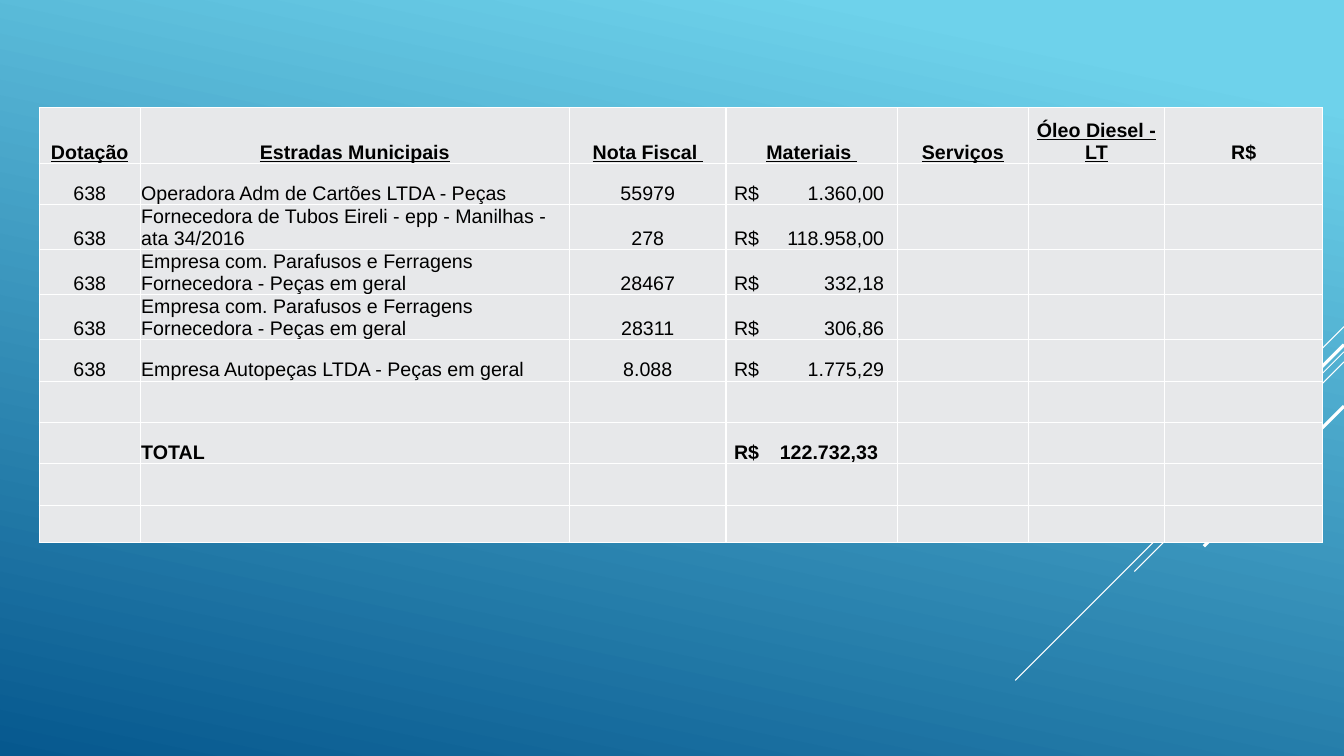
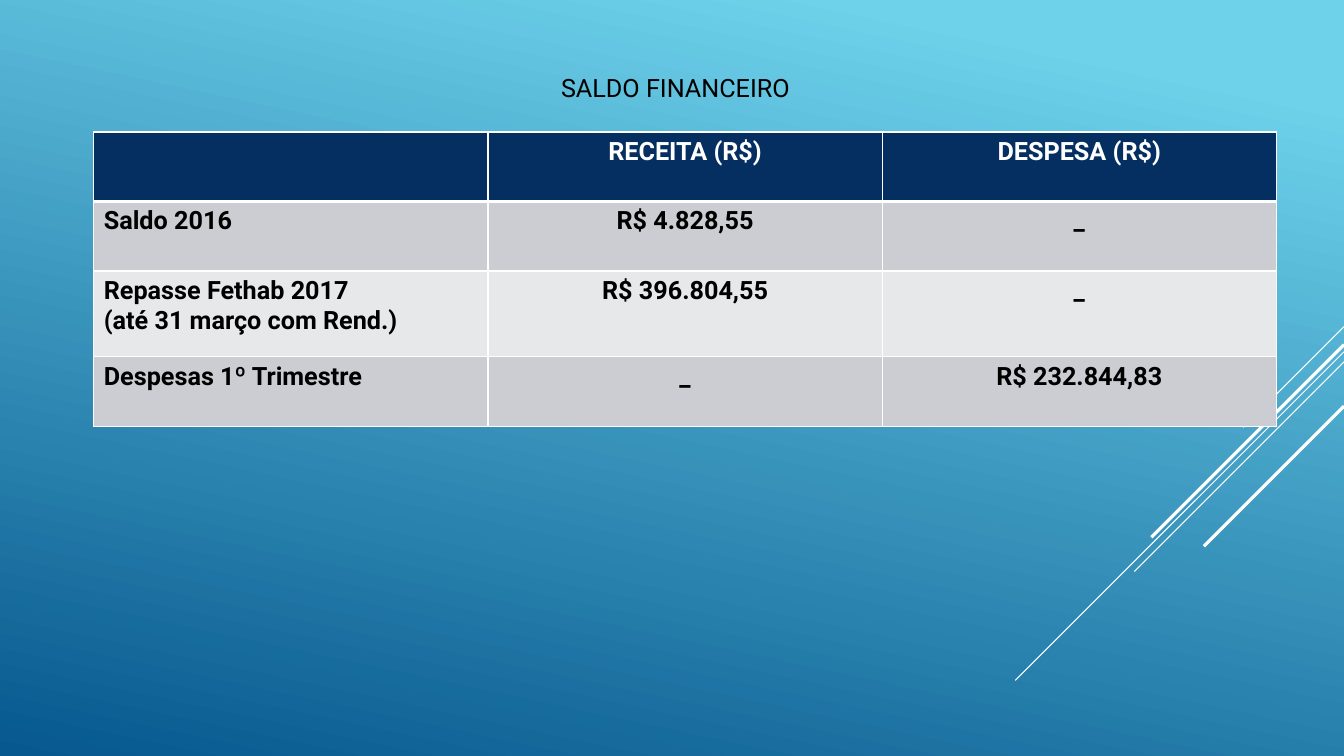
from lxml import etree
from pptx import Presentation, util as u
from pptx.dml.color import RGBColor
from pptx.enum import shapes, text
from pptx.oxml.ns import qn

HUES = {"sky": "6ED2EB", "deep": "06588E", "navy": "052F61", "white": "FFFFFF",
        "black": "000000", "pale": "E7E8EA", "grey": "CCCDD2"}
LEFT, MID, BOTTOM = text.PP_ALIGN.LEFT, text.PP_ALIGN.CENTER, text.MSO_ANCHOR.BOTTOM
# Top of each ray on the right edge, its reach down and left, its width in points
RAYS = [(3.24, 1, 0.75), (3.49, 3.26, 0.75), (3.59, 2.08, 0.75),
        (3.42, 1.91, 2.25), (4.03, 1.39, 2.25)]
WIDE, HIGH = 13.33, 7.5

ROADS = [
    ["Dotação", "Estradas Municipais", "Nota Fiscal ", "Materiais ", "Serviços",
     "Óleo Diesel - LT", "R$"],
    ["638", "Operadora Adm de Cartões LTDA - Peças", "55979", "R$\t1.360,00"],
    ["638", "Fornecedora de Tubos Eireli - epp - Manilhas - ata 34/2016", "278",
     "R$\t118.958,00"],
    ["638", "Empresa com. Parafusos e Ferragens Fornecedora - Peças em geral", "28467",
     "R$\t332,18"],
    ["638", "Empresa com. Parafusos e Ferragens Fornecedora - Peças em geral", "28311",
     "R$\t306,86"],
    ["638", "Empresa Autopeças LTDA - Peças em geral", "8.088", "R$\t1.775,29"],
    [],
    ["", "TOTAL", "", "R$\t122.732,33"],
    [],
    [],
]
FUNDS = [
    ["", "RECEITA (R$)", "DESPESA (R$)"],
    ["Saldo 2016", "R$ 4.828,55", "_"],
    ["Repasse Fethab 2017\n(até 31 março com Rend.)", "R$ 396.804,55", "_"],
    ["Despesas 1º Trimestre", "_", "R$ 232.844,83"],
]


def hue(name):
    return RGBColor.from_string(HUES[name])


def write(frame, words, size=18, font="Roboto", color="black", bold=False,
          under=False, align=LEFT, tab=None):
    """Fill a text frame, one paragraph a line; tab is a right stop in inches."""
    for i, line in enumerate(words.split("\n")):
        para = frame.add_paragraph() if i else frame.paragraphs[0]
        para.alignment = align
        if tab:
            stops = etree.SubElement(para._p.get_or_add_pPr(), qn("a:tabLst"))
            etree.SubElement(stops, qn("a:tab"), pos=str(u.Inches(tab)), algn="r")
        run = para.add_run()
        run.text = line
        run.font.size, run.font.name = u.Pt(size), font
        run.font.bold, run.font.underline = bold, under
        run.font.color.rgb = hue(color)


def edge(cell, **widths):
    """Draw white cell borders; widths in points by side L, R, T, B."""
    props = cell._tc.get_or_add_tcPr()
    for side in "LRTB":
        line = etree.SubElement(props, qn("a:ln" + side), w=str(u.Pt(widths.get(side, 1))))
        fill = etree.SubElement(line, qn("a:solidFill"))
        etree.SubElement(fill, qn("a:srgbClr"), val=HUES["white"])


def paint(cell, color):
    cell.fill.solid()
    cell.fill.fore_color.rgb = hue(color)


def grid(slide, left, top, cols, rows):
    """Add a table without a banded look, sized by its columns and rows."""
    table = slide.shapes.add_table(
        len(rows), len(cols), u.Inches(left), u.Inches(top),
        u.Inches(sum(cols)), u.Inches(sum(rows))).table
    table.first_row = table.horz_banding = False
    for col, width in zip(table.columns, cols):
        col.width = u.Inches(width)
    for row, height in zip(table.rows, rows):
        row.height = u.Inches(height)
    return table


def base(deck):
    """Add a blank slide with the blue gradient and the rays."""
    slide = deck.slides.add_slide(deck.slide_layouts[6])
    fill = slide.background.fill
    fill.gradient()
    fill.gradient_angle = 258
    for stop, (place, name) in zip(fill.gradient_stops, [(0.1, "sky"), (1, "deep")]):
        stop.position, stop.color.rgb = place, hue(name)
    for top, reach, width in RAYS:
        ray = slide.shapes.add_connector(
            shapes.MSO_CONNECTOR.STRAIGHT, u.Inches(WIDE), u.Inches(top),
            u.Inches(WIDE - reach), u.Inches(top + reach))
        ray.line.color.rgb, ray.line.width = hue("white"), u.Pt(width)
        etree.SubElement(ray._element.spPr, qn("a:effectLst"))
    return slide


def title(slide, words, left, top, width, height):
    frame = slide.shapes.add_textbox(*map(u.Inches, (left, top, width, height))).text_frame
    frame.word_wrap = True
    frame.vertical_anchor = text.MSO_ANCHOR.MIDDLE
    write(frame, words, align=MID)


def roads(slide, left, top):
    cols = [1, 4.26, 1.55, 1.7, 1.3, 1.35, 1.57]
    table = grid(slide, left, top, cols, [0.55] + [0.41] * 8 + [0.37])
    for r, row in enumerate(ROADS):
        head, total = r == 0, "TOTAL" in row
        for c in range(len(cols)):
            cell = table.cell(r, c)
            edge(cell)
            paint(cell, "pale")
            words = row[c] if c < len(row) else ""
            money = "\t" in words
            cell.vertical_anchor = BOTTOM
            cell.margin_left = u.Inches(0.08 if money else 0.01)
            cell.margin_right = cell.margin_top = u.Inches(0.01)
            cell.margin_bottom = 0
            if words:
                write(cell.text_frame, words, size=14, font="Arial", bold=head or total,
                      under=head and words != "R$",
                      align=MID if head or c in (0, 2) else LEFT,
                      tab=(1.43 if total else 1.49) if money else None)


def funds(slide, left, top):
    table = grid(slide, left, top, [3.91] * 3, [0.69, 0.69, 0.85, 0.69])
    for r, row in enumerate(FUNDS):
        for c, words in enumerate(row):
            cell = table.cell(r, c)
            edge(cell, B=3 if r == 0 else 1, T=3 if r == 1 else 1)
            paint(cell, "navy" if r == 0 else "grey" if r % 2 else "pale")
            if words:
                write(cell.text_frame, words, bold=True, align=MID if c else LEFT,
                      color="black" if r else "white")


def main():
    deck = Presentation()
    deck.slide_width, deck.slide_height = u.Inches(WIDE), u.Inches(HIGH)
    roads(base(deck), 0.39, 1.07)
    slide = base(deck)
    title(slide, "SALDO FINANCEIRO", 0.82, 0.27, 11.76, 1.19)
    funds(slide, 0.93, 1.31)
    deck.save("out.pptx")


if __name__ == "__main__":
    main()
